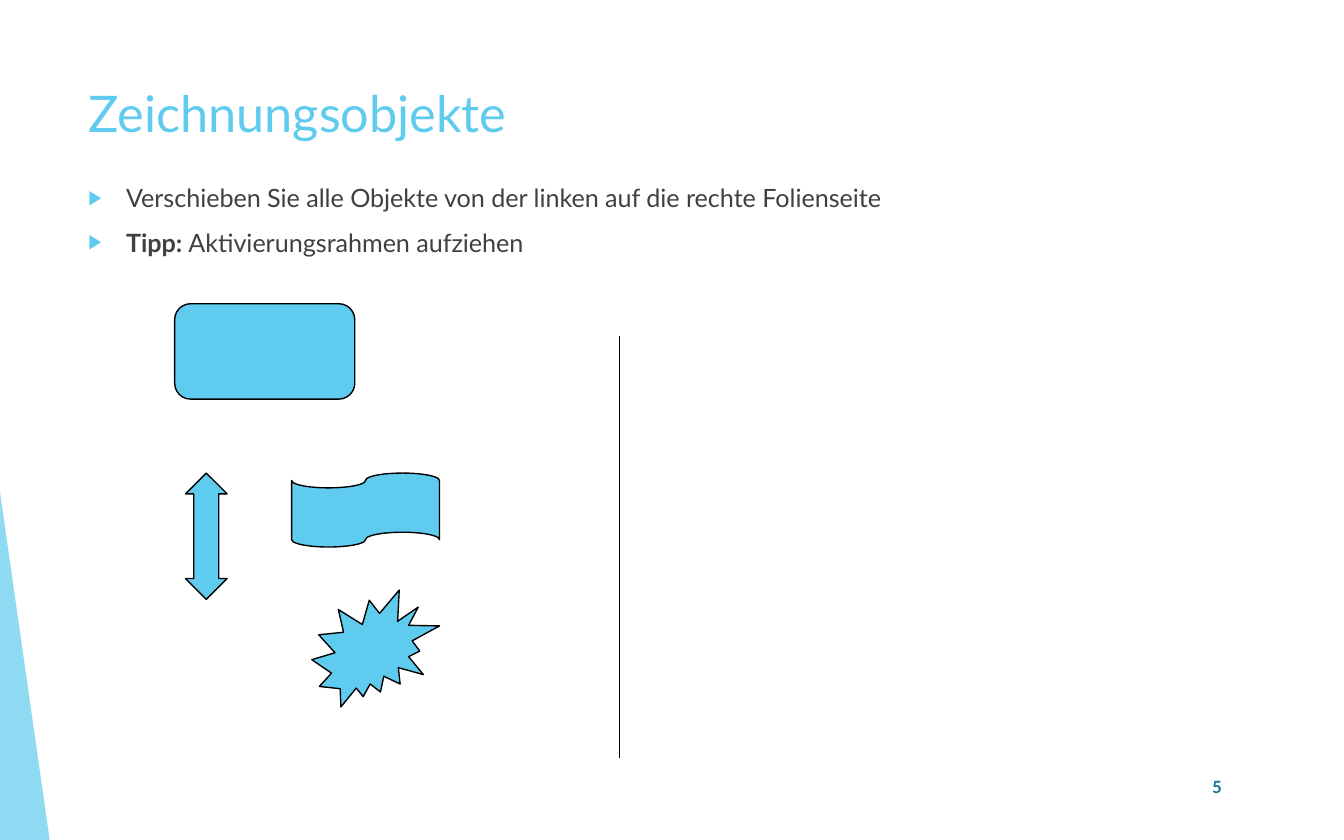
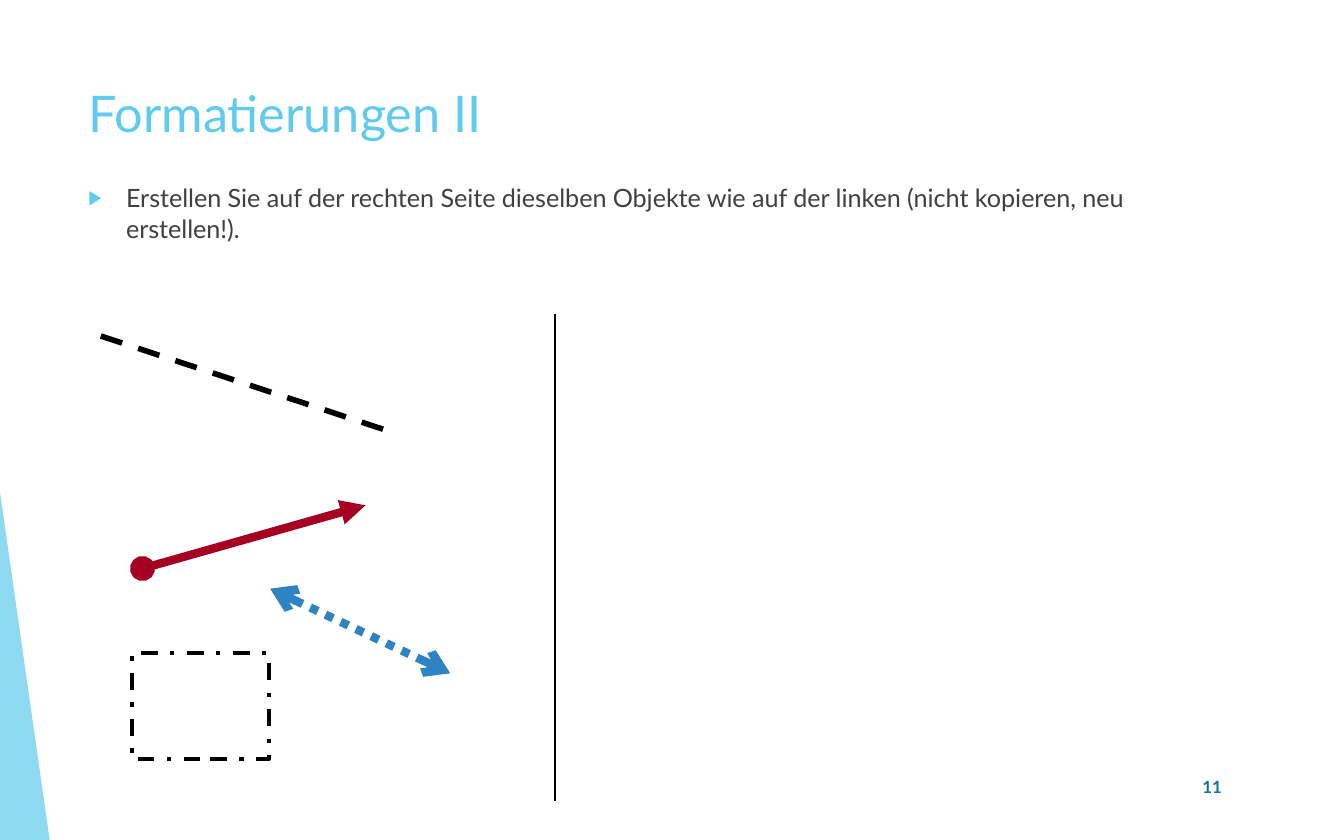
from lxml.etree import SubElement
from pptx import Presentation
from pptx.dml.color import RGBColor
from pptx.enum.dml import MSO_LINE
from pptx.enum.shapes import MSO_CONNECTOR, MSO_SHAPE
from pptx.enum.text import MSO_ANCHOR, PP_ALIGN
from pptx.oxml.ns import qn
from pptx.util import Pt

PX = 9144  # 100 px to the inch
FONT = "Lato"
SKY = RGBColor(0x5F, 0xCB, 0xEF)
TEAL = RGBColor(0x0F, 0x76, 0x98)
GRAY = RGBColor(0x40, 0x40, 0x40)
BLACK = RGBColor(0, 0, 0)
RED = RGBColor(0xA5, 0x00, 0x21)
BLUE = RGBColor(0x2E, 0x83, 0xC3)

WIDTH, HEIGHT = 1000, 625
WEDGE = (0, 366, 37, 259)
TITLE = (56, 56, 862, 60)
BODY = (56, 131, 862, 419)
NUMBER = (863, 569, 56, 33)
INDENT = 28


def emu(*lengths):
    return [length * PX for length in lengths]


def add_tag(parent, tag, **attrs):
    return SubElement(parent, qn(tag), attrs)


def set_line(line, color, width, dash=None):
    line.color.rgb = color
    line.width = Pt(width)
    if dash:
        line.dash_style = dash


def add_form(slide, kind, box, fill=None, line=None, adjust=()):
    form = slide.shapes.add_shape(kind, *emu(*box))
    form.shadow.inherit = False
    for index, value in enumerate(adjust):
        form.adjustments[index] = value
    if fill is None:
        form.fill.background()
    else:
        form.fill.solid()
        form.fill.fore_color.rgb = fill
    if line:
        set_line(form.line, *line)
    else:
        form.line.fill.background()
    return form


def add_stroke(slide, start, end, line, head=None, tail=None):
    stroke = slide.shapes.add_connector(MSO_CONNECTOR.STRAIGHT, *emu(*start, *end))
    set_line(stroke.line, *line)
    props = stroke._element.spPr
    for tag, kind in (("a:headEnd", head), ("a:tailEnd", tail)):
        if kind:
            add_tag(props.find(qn("a:ln")), tag, type=kind)
    add_tag(props, "a:effectLst")


def add_text(slide, box, paras, size, color, bold=False):
    """Each paragraph is a list of (text, bold) runs or a plain string."""
    frame = slide.shapes.add_textbox(*emu(*box)).text_frame
    frame.word_wrap = True
    for index, runs in enumerate(paras):
        para = frame.add_paragraph() if index else frame.paragraphs[0]
        for text, strong in [(runs, bold)] if isinstance(runs, str) else runs:
            run = para.add_run()
            run.text = text
            look = {"name": FONT, "size": Pt(size), "bold": strong}
            for name, value in look.items():
                setattr(run.font, name, value)
            run.font.color.rgb = color
    return frame


def add_bullet(para):
    para.space_before = Pt(7.5)
    props = para._p.get_or_add_pPr()
    props.set("marL", str(INDENT * PX))
    props.set("indent", str(-INDENT * PX))
    add_tag(add_tag(props, "a:buClr"), "a:srgbClr", val=str(SKY))
    add_tag(props, "a:buSzPct", val="80000")
    add_tag(props, "a:buFont", typeface="Arial")
    add_tag(props, "a:buChar", char="▶")


def add_page(deck, title, points, number):
    slide = deck.slides.add_slide(deck.slide_layouts[6])
    wedge = add_form(slide, MSO_SHAPE.ISOSCELES_TRIANGLE, WEDGE, SKY, adjust=[0])
    tint = next(wedge._element.spPr.iter(qn("a:srgbClr")))
    add_tag(tint, "a:alpha", val="70000")
    add_text(slide, TITLE, [title], 27, SKY)
    for para in add_text(slide, BODY, points, 13.5, GRAY).paragraphs:
        add_bullet(para)
    frame = add_text(slide, NUMBER, [number], 9, TEAL, bold=True)
    frame.vertical_anchor = MSO_ANCHOR.MIDDLE
    frame.paragraphs[0].alignment = PP_ALIGN.RIGHT
    return slide


def add_split(slide, x, top, bottom):
    add_stroke(slide, (x, top), (x, bottom), (BLACK, 0.75))


def draw_forms(slide, box):
    left, top, width, height = box
    right, low = left + width, top + 126
    forms = (
        (MSO_SHAPE.FLOWCHART_ALTERNATE_PROCESS, (left, top, 134, 71), ()),
        (MSO_SHAPE.FLOWCHART_PUNCHED_TAPE, (right - 110, low, 110, 55), ()),
        (MSO_SHAPE.UP_DOWN_ARROW, (left + 8, low, 31, 94), (0.5, 0.6)),
        (MSO_SHAPE.EXPLOSION2, (right - 95, top + height - 87, 95, 87), ()),
    )
    for kind, place, adjust in forms:
        add_form(slide, kind, place, SKY, (BLACK, 0.75), adjust)


def draw_lines(slide, box):
    left, top, width, height = box
    right, bottom = left + width, top + height
    add_stroke(slide, (left, top), (left + 212, top + 70),
               (BLACK, 3, MSO_LINE.DASH))
    add_stroke(slide, (left + 31, top + 173), (left + 197, top + 126),
               (RED, 4.5), "oval", "triangle")
    add_stroke(slide, (right - 134, top + 188), (right, top + 251),
               (BLUE, 4.5, MSO_LINE.ROUND_DOT), "arrow", "arrow")
    add_form(slide, MSO_SHAPE.RECTANGLE, (left + 23, bottom - 79, 102, 79),
             line=(BLACK, 2.25, MSO_LINE.DASH_DOT))


def main():
    deck = Presentation()
    deck.slide_width, deck.slide_height = emu(WIDTH, HEIGHT)

    page = add_page(deck, "Zeichnungsobjekte", [
        "Verschieben Sie alle Objekte von der linken auf die rechte Folienseite",
        [("Tipp: ", True), ("Aktivierungsrahmen aufziehen", False)],
    ], "5")
    draw_forms(page, (130, 226, 197, 300))
    add_split(page, 461, 250, 564)

    page = add_page(deck, "Formatierungen II", [
        "Erstellen Sie auf der rechten Seite dieselben Objekte wie auf der "
        "linken (nicht kopieren, neu erstellen!).",
    ], "11")
    draw_lines(page, (75, 250, 260, 315))
    add_split(page, 413, 234, 596)

    deck.save("out.pptx")


if __name__ == "__main__":
    main()
